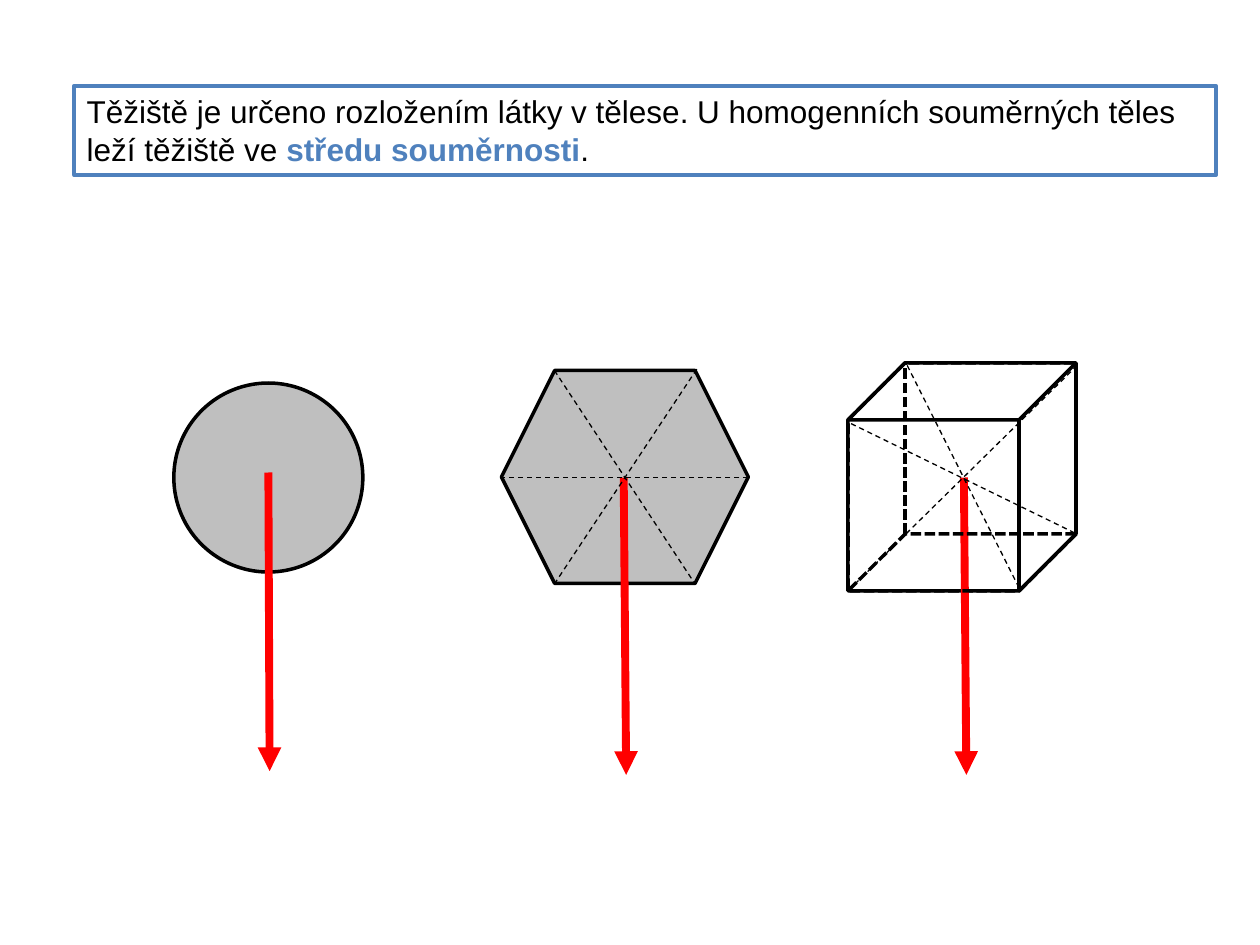
"""Build a slide on the centre of gravity of homogeneous symmetric bodies."""
from dataclasses import dataclass

from lxml import etree
from pptx import Presentation
from pptx import util as u
from pptx.dml.color import RGBColor
from pptx.enum import dml, shapes, text
from pptx.oxml import ns


@dataclass(frozen=True)
class Theme:
    font: str = "Arial"
    body_size: float = 18
    ink: RGBColor = RGBColor(0, 0, 0)
    accent: RGBColor = RGBColor(0x4F, 0x81, 0xBD)
    solid: RGBColor = RGBColor(0xBF, 0xBF, 0xBF)
    force: RGBColor = RGBColor(0xFF, 0, 0)
    frame_width: float = 2.25
    edge_width: float = 2
    force_width: float = 4.5
    axis_width: float = 0.75


class Painter:
    def __init__(self, page, theme):
        self.page = page
        self.theme = theme

    def stroke(self, line, color, width, dash=None):
        line.color.rgb = color
        line.width = u.Pt(width)
        if dash is not None:
            line.dash_style = dash

    def statement(self, place, pieces):
        box = self.page.shapes.add_textbox(*map(u.Inches, place))
        self.stroke(box.line, self.theme.accent, self.theme.frame_width)
        frame = box.text_frame
        frame.word_wrap = True
        frame.auto_size = text.MSO_AUTO_SIZE.SHAPE_TO_FIT_TEXT
        para = frame.paragraphs[0]
        for words, strong in pieces:
            span = para.add_run()
            span.text = words
            span.font.name = self.theme.font
            span.font.size = u.Pt(self.theme.body_size)
            span.font.bold = strong
            span.font.color.rgb = self.theme.accent if strong else self.theme.ink

    def body(self, kind, place, fill=None, dash=None, rotation=0):
        shape = self.page.shapes.add_shape(kind, *map(u.Inches, place))
        shape.shadow.inherit = False
        shape.rotation = rotation
        if fill is None:
            shape.fill.background()
        else:
            shape.fill.solid()
            shape.fill.fore_color.rgb = fill
        self.stroke(shape.line, self.theme.ink, self.theme.edge_width, dash)

    def segment(self, start, end, color, width, dash=None):
        line = self.page.shapes.add_connector(
            shapes.MSO_CONNECTOR.STRAIGHT, *map(u.Inches, (*start, *end)))
        self.stroke(line.line, color, width, dash)
        etree.SubElement(line._element.spPr, ns.qn("a:effectLst"))
        return line

    def axis(self, start, end):
        self.segment(start, end, self.theme.ink, self.theme.axis_width,
                     dml.MSO_LINE.DASH)

    def gravity(self, start, end):
        arrow = self.segment(start, end, self.theme.force, self.theme.force_width)
        etree.SubElement(arrow.line._get_or_add_ln(), ns.qn("a:tailEnd"),
                         type="triangle")


def main():
    deck = Presentation()
    deck.slide_width, deck.slide_height = u.Inches(10), u.Inches(7.5)
    page = deck.slides.add_slide(deck.slide_layouts[6])
    theme = Theme()
    painter = Painter(page, theme)
    kinds = shapes.MSO_SHAPE

    painter.statement((0.59, 0.68, 9.06, 0.71), [
        ("Těžiště je určeno rozložením látky v tělese. "
         "U homogenních souměrných těles leží těžiště ve ", False),
        ("středu souměrnosti", True),
        (".", False),
    ])

    cube = (6.73, 2.88, 1.81, 1.81)
    painter.body(kinds.OVAL, (1.38, 3.04, 1.5, 1.5), theme.solid)
    painter.body(kinds.HEXAGON, (3.98, 2.94, 1.96, 1.69), theme.solid)
    painter.body(kinds.CUBE, cube)

    for start, end in [((2.13, 3.75), (2.14, 6.12)),
                       ((4.95, 3.79), (4.97, 6.15)),
                       ((7.65, 3.79), (7.67, 6.15))]:
        painter.gravity(start, end)

    hexagon_axes = [((4.4, 2.94), (5.52, 4.64)),
                    ((5.53, 2.93), (4.39, 4.65)),
                    ((5.94, 3.79), (3.98, 3.79))]
    cube_axes = [((7.2, 2.9), (8.1, 4.69)),
                 ((8.55, 2.9), (6.73, 4.69)),
                 ((8.53, 4.23), (6.73, 3.35))]
    for start, end in hexagon_axes + cube_axes:
        painter.axis(start, end)

    painter.body(kinds.CUBE, cube, dash=dml.MSO_LINE.SQUARE_DOT, rotation=180)
    deck.save("out.pptx")


if __name__ == "__main__":
    main()
